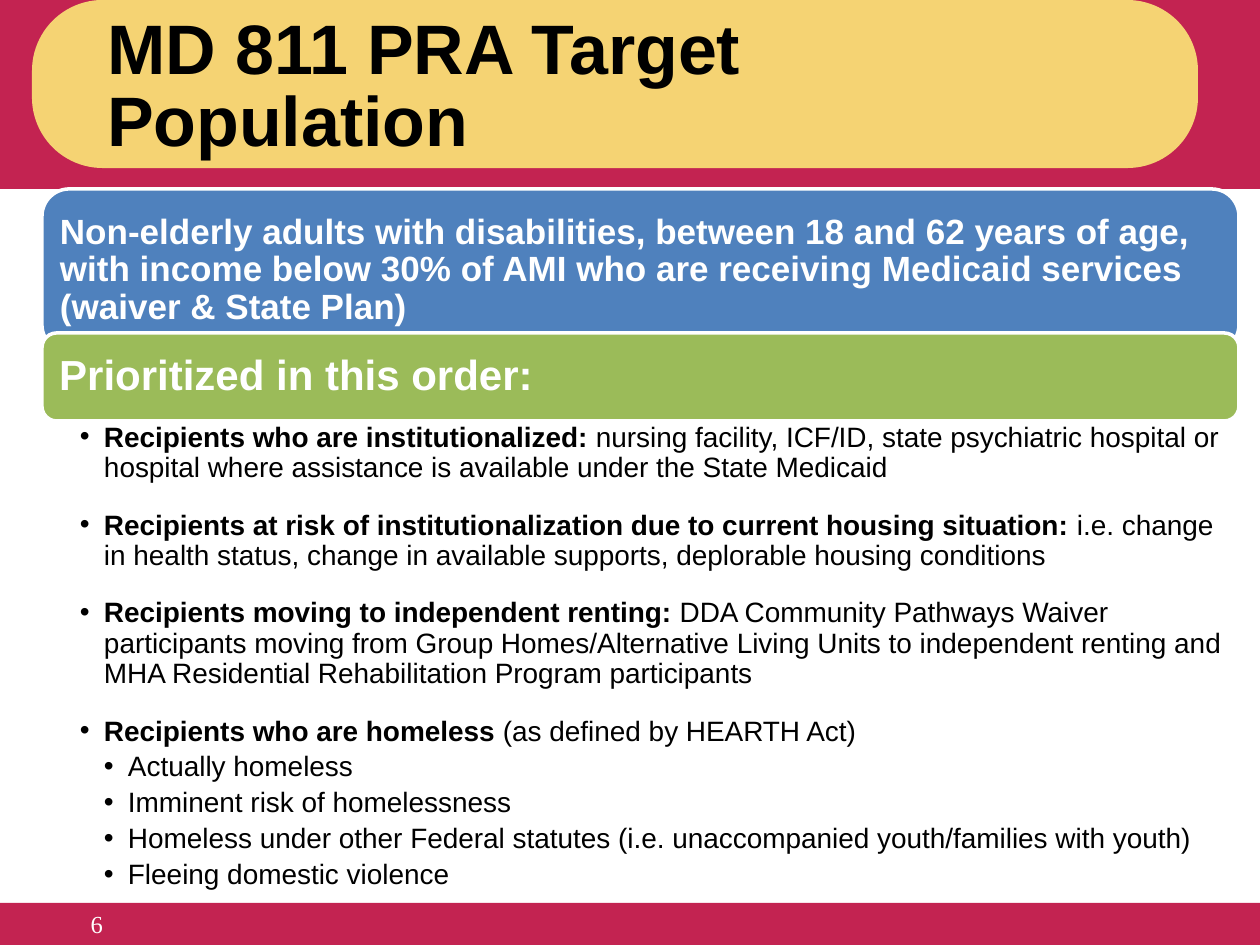
from lxml import etree
from pptx import Presentation
from pptx.dml.color import RGBColor
from pptx.enum.shapes import MSO_SHAPE
from pptx.enum.text import MSO_ANCHOR, MSO_AUTO_SIZE, PP_ALIGN
from pptx.oxml.ns import qn
from pptx.util import Emu, Pt

RECTANGLE = MSO_SHAPE.RECTANGLE
ROUNDED = MSO_SHAPE.ROUNDED_RECTANGLE
TOP, MIDDLE = MSO_ANCHOR.TOP, MSO_ANCHOR.MIDDLE
LEFT, RIGHT = PP_ALIGN.LEFT, PP_ALIGN.RIGHT

EMU_PER_PX = 914400 / 126
WIDTH, HEIGHT = 1260, 945
CRIMSON, YELLOW, BLUE, GREEN = "C32351", "F5D373", "4F81BD", "9BBB59"
WHITE, BLACK = "FFFFFF", "000000"
INDENT = 24

PRIORITIES = [
    ("Recipients who are institutionalized: ",
     "nursing facility, ICF/ID, state psychiatric hospital or hospital where "
     "assistance is available under the State Medicaid"),
    ("Recipients at risk of institutionalization due to current housing situation: ",
     "i.e. change in health status, change in available supports, "
     "deplorable housing conditions"),
    ("Recipients moving to independent renting: ",
     "DDA Community Pathways Waiver participants moving from Group "
     "Homes/Alternative Living Units to independent renting and "
     "MHA Residential Rehabilitation Program participants"),
    ("Recipients who are homeless ", "(as defined by HEARTH Act)"),
]
HOMELESS_TYPES = [
    "Actually homeless",
    "Imminent risk of homelessness",
    "Homeless under other Federal statutes (i.e. unaccompanied youth/families with youth)",
    "Fleeing domestic violence",
]


def px(length):
    return Emu(round(length * EMU_PER_PX))


def color(value):
    return RGBColor.from_string(value)


def place(shape, box):
    shape.left, shape.top, shape.width, shape.height = map(px, box)


def add_block(slide, kind, box, fill, line=None, corner=None):
    shape = slide.shapes.add_shape(kind, *map(px, box))
    shape.shadow.inherit = False
    shape.fill.solid()
    shape.fill.fore_color.rgb = color(fill)
    if line:
        shape.line.color.rgb = color(line)
        shape.line.width = Pt(2)
    else:
        shape.line.fill.background()
    if corner is not None:
        shape.adjustments[0] = corner
    return shape


def set_frame(shape, margins, anchor):
    frame = shape.text_frame
    frame.word_wrap = True
    frame.auto_size = MSO_AUTO_SIZE.NONE
    frame.vertical_anchor = anchor
    (frame.margin_left, frame.margin_top,
     frame.margin_right, frame.margin_bottom) = map(px, margins)
    return frame


def write_text(paragraph, text, size, fill=BLACK, font="Arial", bold=False,
               align=LEFT, spacing=0.9):
    paragraph.alignment = align
    paragraph.line_spacing = spacing
    for index, line in enumerate(text.split("\n")):
        if index:
            paragraph.add_line_break()
        run = paragraph.add_run()
        run.text = line
        run.font.size = Pt(size)
        run.font.name = font
        run.font.bold = bold
        run.font.color.rgb = color(fill)


def add_bullet(paragraph, level):
    paragraph.level = level
    properties = paragraph._p.get_or_add_pPr()
    properties.set("marL", str(px(INDENT * level)))
    properties.set("indent", str(-px(INDENT)))
    etree.SubElement(properties, qn("a:buFont")).set("typeface", "Arial")
    etree.SubElement(properties, qn("a:buChar")).set("char", "•")


def add_header(slide, box, text):
    left, top, width, height = box
    add_block(slide, RECTANGLE, box, CRIMSON)
    add_block(slide, ROUNDED, (left + 32, top, width - 94, height - 21), YELLOW, corner=0.42)
    title = slide.shapes.title
    title.element.getparent().append(title.element)
    place(title, (left + 94, top + 10, width - 147, height - 31))
    frame = set_frame(title, (13, 6, 13, 6), MIDDLE)
    write_text(frame.paragraphs[0], text, 40, bold=True, spacing=0.85)


def add_banner(slide, box, text, fill, size, margin):
    shape = add_block(slide, ROUNDED, box, fill, line=WHITE)
    frame = set_frame(shape, (margin,) * 4, MIDDLE)
    write_text(frame.paragraphs[0], text, size, WHITE, bold=True)


def add_priorities(slide, box):
    frame = set_frame(slide.shapes.add_textbox(*map(px, box)), (38, 3, 15, 3), TOP)
    entries = [(1, heading, detail) for heading, detail in PRIORITIES]
    entries += [(2, "", detail) for detail in HOMELESS_TYPES]
    for index, (level, heading, detail) in enumerate(entries):
        paragraph = frame.add_paragraph() if index else frame.paragraphs[0]
        add_bullet(paragraph, level)
        if heading:
            write_text(paragraph, heading, 16, bold=True)
        write_text(paragraph, detail, 16)
        is_separated = index < len(PRIORITIES) - 1
        paragraph.space_after = Pt(15.7 if is_separated else 3.2)


def add_footer(slide, box, number):
    left, top, width, height = box
    add_block(slide, RECTANGLE, box, CRIMSON)
    label = slide.shapes.add_textbox(*map(px, (left, top, 116, height)))
    frame = set_frame(label, (13, 6, 13, 6), TOP)
    write_text(frame.paragraphs[0], number, 14, WHITE, "Times New Roman",
               align=RIGHT, spacing=1.0)


def main():
    presentation = Presentation()
    presentation.slide_width, presentation.slide_height = px(WIDTH), px(HEIGHT)
    slide = presentation.slides.add_slide(presentation.slide_layouts[5])
    add_header(slide, (0, 0, WIDTH, 189), "MD 811 PRA Target\nPopulation")
    add_banner(slide, (42, 189, 1197, 163),
               "Non-elderly adults with disabilities, between 18 and 62 years of age, "
               "with income below 30% of AMI who are receiving Medicaid services "
               "(waiver & State Plan)", BLUE, 20, 10)
    add_banner(slide, (42, 333, 1197, 88), "Prioritized in this order:", GREEN, 24, 13)
    add_priorities(slide, (42, 420, 1197, 470))
    add_footer(slide, (0, 903, WIDTH, 42), "6")
    presentation.save("out.pptx")


if __name__ == "__main__":
    main()
